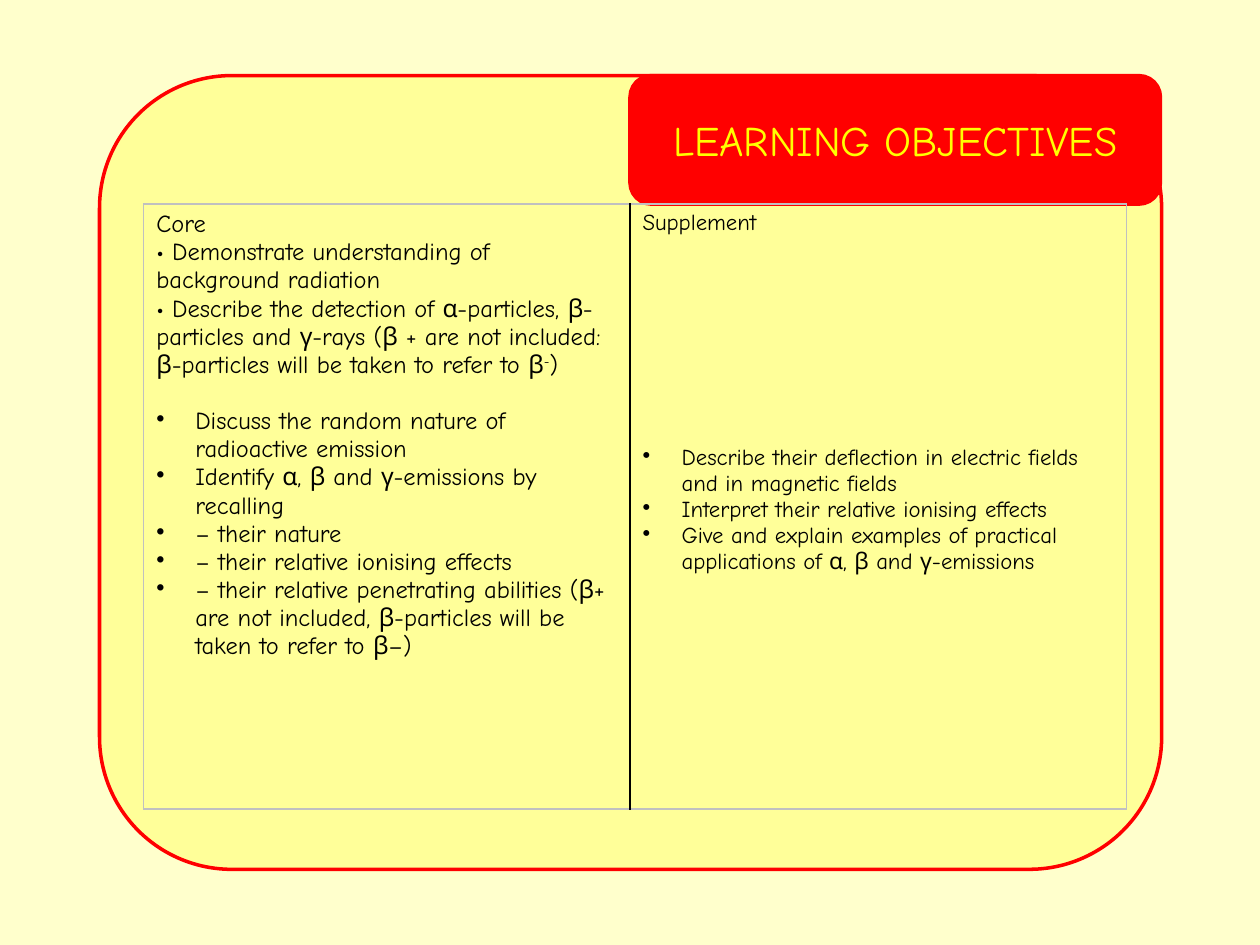
from lxml import etree
from pptx import Presentation, util as u
from pptx.dml.color import RGBColor
from pptx.enum import shapes, text
from pptx.oxml.ns import qn

Inches, Pt = u.Inches, u.Pt


def colour(value):
    return RGBColor.from_string(value)


def write(para, words, size=14, ink="000000", font="Comic Neue", raised=False):
    span = para.add_run()
    span.text = words
    span.font.size = Pt(size)
    span.font.name = font
    span.font.color.rgb = colour(ink)
    if raised:
        span._r.get_or_add_rPr().set("baseline", "30000")


class ObjectivesPage:
    red, yellow, cream, pale = "FF0000", "FFFF00", "FFFFCC", "FFFF99"
    grey, black = "C0C0C0", "000000"
    indent = Inches(0.31)

    def __init__(self, deck):
        self.page = deck.slides.add_slide(deck.slide_layouts[6])

    def panel(self, kind, left, top, width, height, fill, line=None):
        box = self.page.shapes.add_shape(
            kind, Inches(left), Inches(top), Inches(width), Inches(height))
        box.shadow.inherit = False
        box.fill.solid()
        box.fill.fore_color.rgb = colour(fill)
        if line:
            box.line.color.rgb = colour(line)
            box.line.width = Pt(2)
        else:
            box.line.fill.background()
        return box

    def title(self, box, words):
        box.text_frame.vertical_anchor = text.MSO_ANCHOR.MIDDLE
        para = box.text_frame.paragraphs[0]
        para.alignment = text.PP_ALIGN.CENTER
        write(para, words, size=24, ink=self.yellow)

    def table(self, left, top, widths, height):
        frame = self.page.shapes.add_table(
            1, len(widths), Inches(left), Inches(top), Inches(sum(widths)), Inches(height))
        table = frame.table
        table.first_row = table.horz_banding = False
        for column, width in zip(table.columns, widths):
            column.width = Inches(width)
        return table

    def borders(self, cell, **sides):
        cell.fill.background()
        properties = cell._tc.get_or_add_tcPr()
        for place, side in enumerate("LRTB"):
            line = etree.Element(qn(f"a:ln{side}"), w=str(Pt(1)))
            fill = etree.SubElement(line, qn("a:solidFill"))
            etree.SubElement(fill, qn("a:srgbClr"), val=sides.get(side, self.grey))
            properties.insert(place, line)

    def fill_cell(self, cell, plain, bullets, size, gap):
        """Plain paragraphs, a gap in points, then bulleted paragraphs."""
        frame = cell.text_frame
        for number, item in enumerate(plain + bullets):
            para = frame.add_paragraph() if number else frame.paragraphs[0]
            if number == len(plain):
                para.space_before = Pt(gap)
            if number >= len(plain):
                self.bullet(para)
            for part, words in enumerate(item.split("^")):
                write(para, words, size=size, raised=part % 2 == 1)

    def bullet(self, para):
        properties = para._p.get_or_add_pPr()
        properties.set("marL", str(self.indent))
        properties.set("indent", str(-self.indent))
        etree.SubElement(properties, qn("a:buChar"), char="•")


# Text between carets is superscript
CORE = [
    "Core",
    "• Demonstrate understanding of background radiation",
    "• Describe the detection of α-particles, β-particles and γ-rays "
    "(β + are not included: β-particles will be taken to refer to β^-^)",
]
CORE_BULLETS = [
    "Discuss the random nature of radioactive emission",
    "Identify α, β and γ-emissions by recalling",
    "– their nature",
    "– their relative ionising effects",
    "– their relative penetrating abilities (β+ are not included, "
    "β-particles will be taken to refer to β–)",
]
SUPPLEMENT_BULLETS = [
    "Describe their deflection in electric fields and in magnetic fields",
    "Interpret their relative ionising effects",
    "Give and explain examples of practical applications of α, β and γ-emissions",
]


def main():
    deck = Presentation()
    deck.slide_width, deck.slide_height = Inches(10), Inches(7.5)
    page = ObjectivesPage(deck)
    kinds = shapes.MSO_SHAPE

    # Background and frame
    page.panel(kinds.RECTANGLE, 0, 0, 10, 7.5, page.cream)
    page.panel(kinds.ROUNDED_RECTANGLE, 0.79, 0.6, 8.43, 6.3, page.pale, page.red)

    # Title
    banner = page.panel(kinds.ROUNDED_RECTANGLE, 5, 0.6, 4.21, 1.02, page.red, page.red)
    page.title(banner, "LEARNING OBJECTIVES")

    # Objectives table
    table = page.table(1.14, 1.62, [3.86, 3.94], 4.8)
    core, supplement = table.cell(0, 0), table.cell(0, 1)
    page.borders(core, R=page.black)
    page.borders(supplement, L=page.black)
    page.fill_cell(core, CORE, CORE_BULLETS, size=14, gap=16)
    page.fill_cell(supplement, ["Supplement"], SUPPLEMENT_BULLETS, size=13, gap=119)

    deck.save("out.pptx")


if __name__ == "__main__":
    main()
